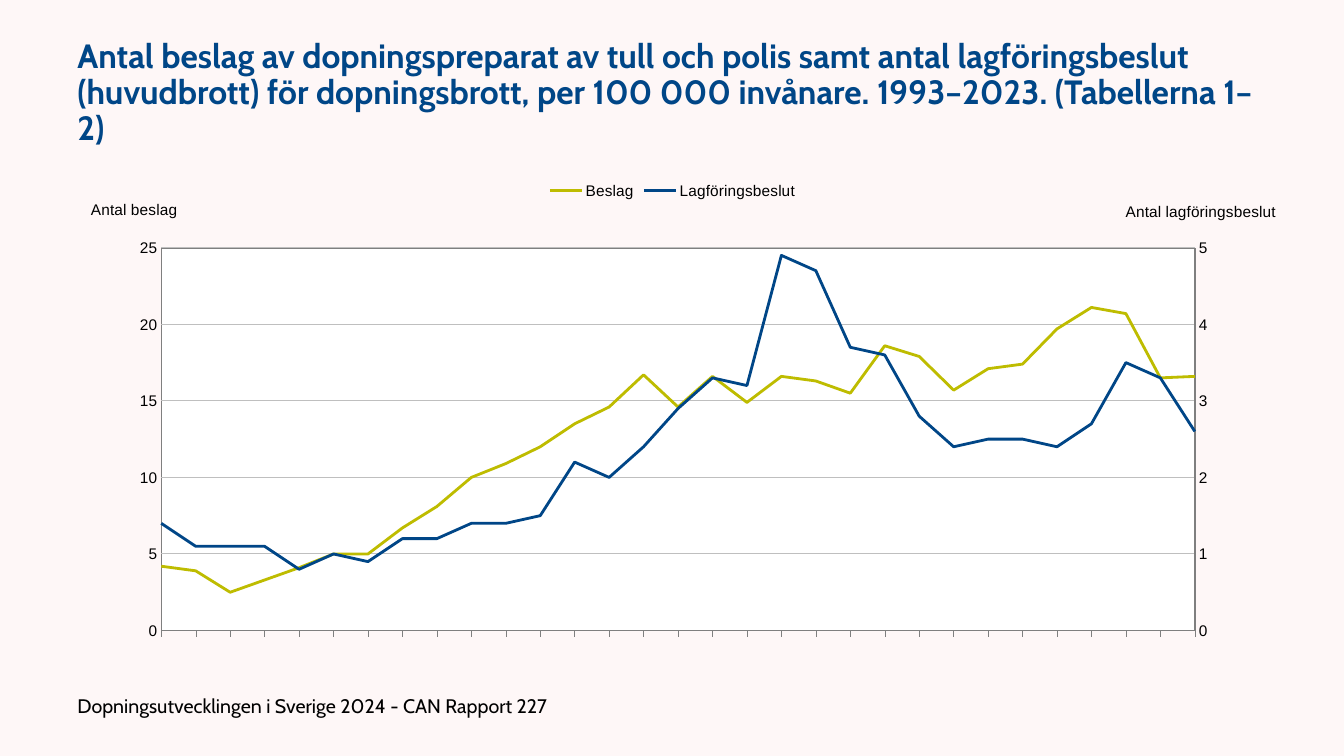
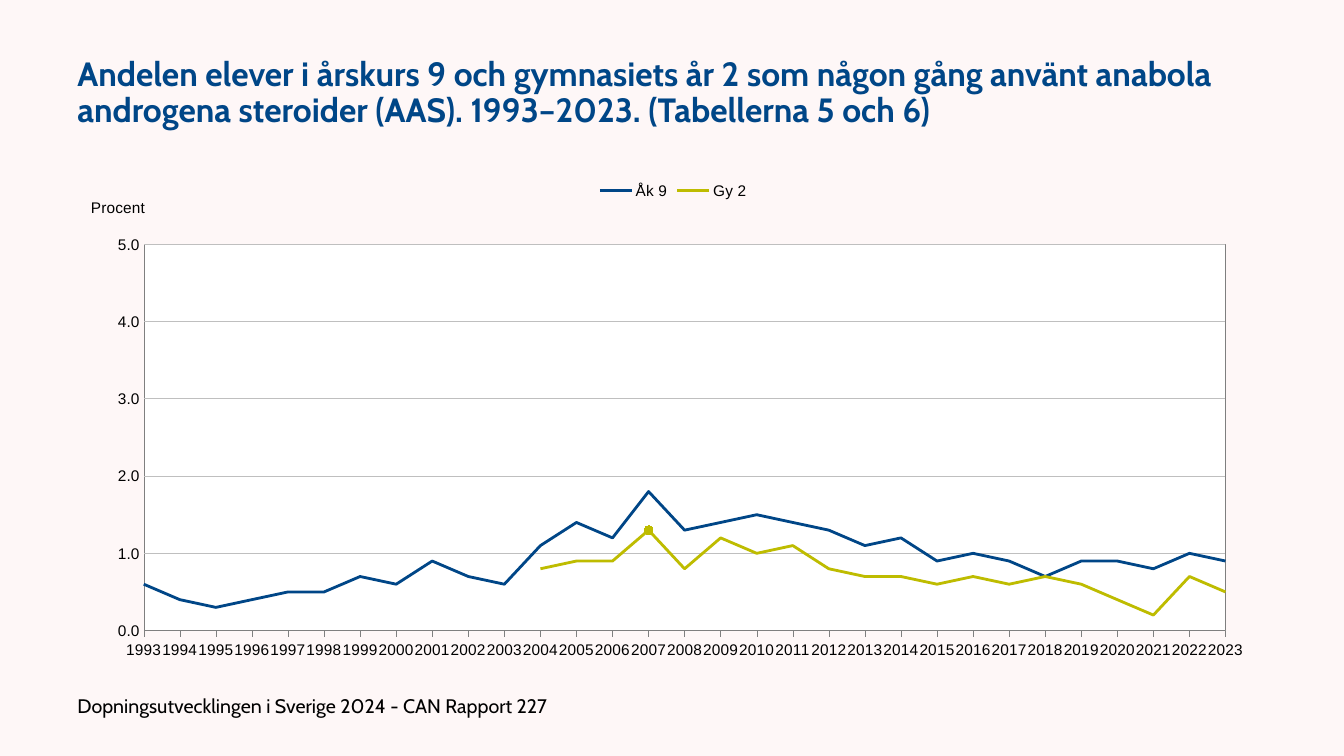
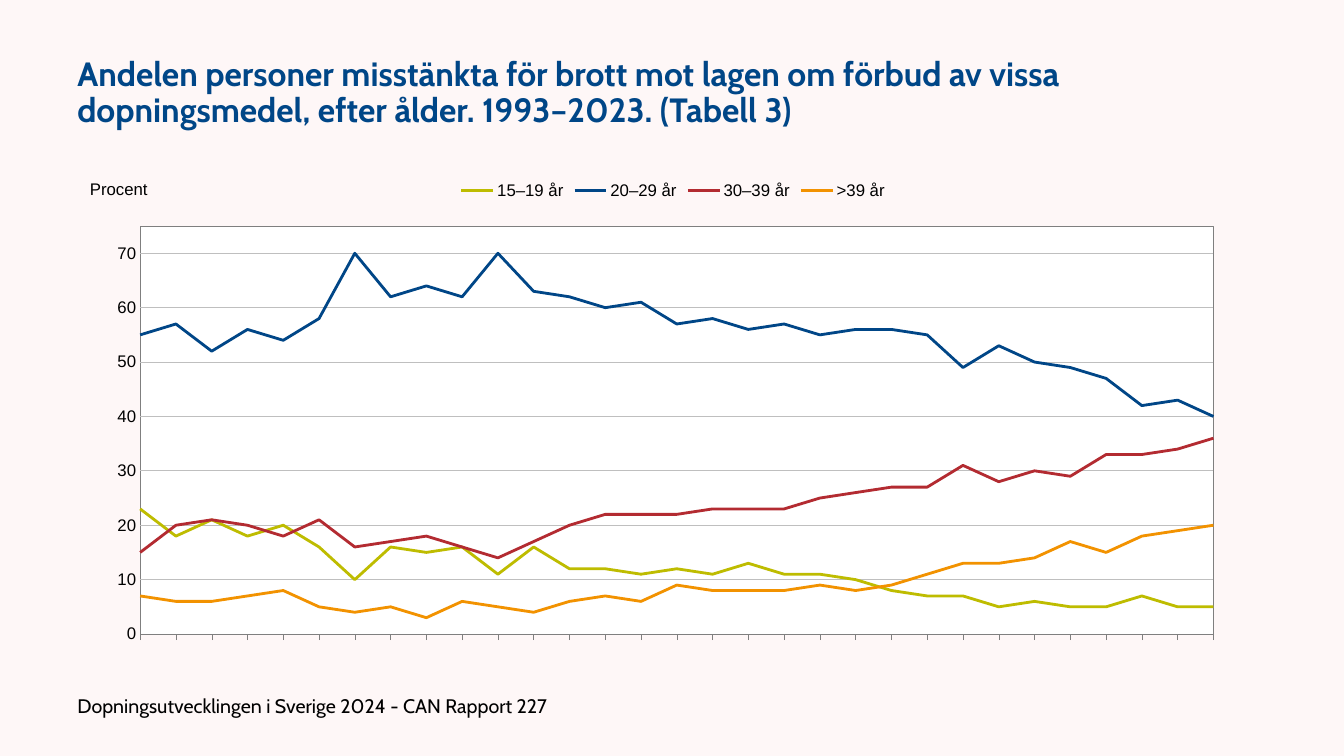
from copy import deepcopy

from lxml import etree
from pptx import Presentation
from pptx.chart import axis as ax
from pptx.chart.data import CategoryChartData
from pptx.dml.color import RGBColor
from pptx.enum import chart as ch, text
from pptx.oxml import parse_xml
from pptx.oxml.ns import nsdecls, qn
from pptx.util import Cm, Pt

PINK = RGBColor(0xFE, 0xF7, 0xF7)
BLUE = RGBColor(0x00, 0x46, 0x87)
OLIVE = RGBColor(0xBE, 0xBC, 0x00)
RED = RGBColor(0xB3, 0x2B, 0x31)
ORANGE = RGBColor(0xF2, 0x92, 0x00)
BLACK = RGBColor(0x00, 0x00, 0x00)
GRID = RGBColor(0xBF, 0xBF, 0xBF)
AXIS = RGBColor(0x7F, 0x7F, 0x7F)

TEXT_FONT = "Cabin"
CHART_FONT = "Arial"
LEFT = Cm(1.7)
YEARS = [str(year) for year in range(1993, 2024)]
FOOTER = "Dopningsutvecklingen i Sverige 2024 - CAN Rapport 227"

SEIZURES = [4.2, 3.9, 2.5, 3.3, 4.1, 5, 5, 6.7, 8.1, 10, 10.9, 12, 13.5, 14.6, 16.7, 14.6,
            16.6, 14.9, 16.6, 16.3, 15.5, 18.6, 17.9, 15.7, 17.1, 17.4, 19.7, 21.1, 20.7,
            16.5, 16.6]
RULINGS = [1.4, 1.1, 1.1, 1.1, 0.8, 1, 0.9, 1.2, 1.2, 1.4, 1.4, 1.5, 2.2, 2, 2.4, 2.9, 3.3,
           3.2, 4.9, 4.7, 3.7, 3.6, 2.8, 2.4, 2.5, 2.5, 2.4, 2.7, 3.5, 3.3, 2.6]
GRADE_9 = [0.6, 0.4, 0.3, 0.4, 0.5, 0.5, 0.7, 0.6, 0.9, 0.7, 0.6, 1.1, 1.4, 1.2, 1.8, 1.3,
           1.4, 1.5, 1.4, 1.3, 1.1, 1.2, 0.9, 1, 0.9, 0.7, 0.9, 0.9, 0.8, 1, 0.9]
UPPER_2 = [None] * 11 + [0.8, 0.9, 0.9, 1.3, 0.8, 1.2, 1, 1.1, 0.8, 0.7, 0.7, 0.6, 0.7, 0.6,
                         0.7, 0.6, 0.4, 0.2, 0.7, 0.5]
AGE_15 = [23, 18, 21, 18, 20, 16, 10, 16, 15, 16, 11, 16, 12, 12, 11, 12, 11, 13, 11, 11, 10,
          8, 7, 7, 5, 6, 5, 5, 7, 5, 5]
AGE_20 = [55, 57, 52, 56, 54, 58, 70, 62, 64, 62, 70, 63, 62, 60, 61, 57, 58, 56, 57, 55, 56,
          56, 55, 49, 53, 50, 49, 47, 42, 43, 40]
AGE_30 = [15, 20, 21, 20, 18, 21, 16, 17, 18, 16, 14, 17, 20, 22, 22, 22, 23, 23, 23, 25, 26,
          27, 27, 31, 28, 30, 29, 33, 33, 34, 36]
AGE_40 = [7, 6, 6, 7, 8, 5, 4, 5, 3, 6, 5, 4, 6, 7, 6, 9, 8, 8, 8, 9, 8, 9, 11, 13, 13, 14,
          17, 15, 18, 19, 20]


def add_text(s, words, top, width, height, size, color, bold=False):
    tf = s.shapes.add_textbox(LEFT, top, width, height).text_frame
    tf.word_wrap = True
    tf.vertical_anchor = text.MSO_ANCHOR.MIDDLE
    p = tf.paragraphs[0]
    p.line_spacing = 0.9
    r = p.add_run()
    r.text = words
    set_font(r.font, TEXT_FONT, size, color, bold)


def set_font(font, name, size, color=BLACK, bold=False):
    font.name = name
    font.size = Pt(size)
    font.bold = bold
    font.color.rgb = color


def set_line(line, color, width):
    line.color.rgb = color
    line.width = Pt(width)


def add_slide(prs, title):
    s = prs.slides.add_slide(prs.slide_layouts[6])
    add_text(s, title, Cm(0.77), Cm(30.48), Cm(3.18), 24, BLUE, True)
    add_text(s, FOOTER, Cm(17.35), Cm(15.24), Cm(0.94), 14, BLACK)
    return s


def set_layout(parent, inner=False, **percents):
    layout = parent.find(qn("c:layout"))
    if layout is None:
        layout = etree.Element(qn("c:layout"))
        parent.insert(0, layout)
    manual = etree.SubElement(layout, qn("c:manualLayout"))
    values = {"layoutTarget": "inner"} if inner else {}
    values.update(xMode="edge", yMode="edge")
    values.update({tag: percent / 100 for tag, percent in percents.items()})
    for tag, value in values.items():
        etree.SubElement(manual, qn("c:" + tag)).set("val", str(value))


def style_plot_area(chart, x, y, w, h):
    area = chart._chartSpace.chart.plotArea
    set_layout(area, True, x=x, y=y, w=w, h=h)
    area.append(parse_xml(
        f'<c:spPr {nsdecls("c", "a")}>'
        '<a:solidFill><a:srgbClr val="FFFFFF"/></a:solidFill>'
        f'<a:ln w="{Pt(0.25)}"><a:solidFill><a:srgbClr val="{AXIS}"/></a:solidFill></a:ln>'
        '</c:spPr>'))


def style_value_axis(axis, title, x, y, top, step, size, number_format="0"):
    axis.minimum_scale, axis.maximum_scale, axis.major_unit = 0, top, step
    axis.major_tick_mark = ch.XL_TICK_MARK.NONE
    axis.tick_labels.number_format = number_format
    axis.tick_labels.number_format_is_linked = False
    set_font(axis.tick_labels.font, CHART_FONT, size)
    tf = axis.axis_title.text_frame
    r = tf.paragraphs[0].add_run()
    r.text = title
    set_font(r.font, CHART_FONT, size)
    body = tf._txBody.bodyPr
    body.set("rot", "0")
    body.set("vert", "horz")
    set_layout(axis.axis_title._element, x=x, y=y)


def style_category_axis(axis, size, labelled):
    axis.major_tick_mark = ch.XL_TICK_MARK.OUTSIDE
    set_line(axis.format.line, AXIS, 0.25)
    if not labelled:
        axis.tick_label_position = ch.XL_TICK_LABEL_POSITION.NONE
        return
    set_font(axis.tick_labels.font, CHART_FONT, size)
    axis._element.find(qn("c:txPr")).find(qn("a:bodyPr")).set("rot", "-60000000")
    skip = etree.Element(qn("c:tickLblSkip"))
    skip.set("val", "1")
    axis._element.find(qn("c:noMultiLvlLbl")).addprevious(skip)


def start_lines_on_axis(axis):
    between = axis._element.find(qn("c:crossBetween"))
    if between is None:
        between = etree.Element(qn("c:crossBetween"))
        axis._element.find(qn("c:crosses")).addnext(between)
    between.set("val", "midCat")


def add_line_chart(s, series, plot, size, labelled=False):
    data = CategoryChartData()
    data.categories = YEARS
    for name, values, _ in series:
        data.add_series(name, values)
    chart = s.shapes.add_chart(ch.XL_CHART_TYPE.LINE, LEFT, Cm(4.29), Cm(30.53), Cm(12.57),
                               data).chart
    chart.has_title = False
    set_font(chart.font, CHART_FONT, size)
    chart.has_legend = True
    chart.legend.position = ch.XL_LEGEND_POSITION.TOP
    chart.legend.include_in_layout = False
    set_font(chart.legend.font, CHART_FONT, size)
    chart.plots[0].vary_by_categories = False
    for line, (_, _, color) in zip(chart.plots[0].series, series):
        line.smooth = False
        line.marker.style = ch.XL_MARKER_STYLE.NONE
        set_line(line.format.line, color, 2)
    style_plot_area(chart, *plot)
    style_category_axis(chart.category_axis, size, labelled)
    axis = chart.value_axis
    start_lines_on_axis(axis)
    axis.has_major_gridlines = True
    set_line(axis.major_gridlines.format.line, GRID, 0.75)
    axis.format.line.fill.background()
    return chart


def move_last_series_right(chart):
    left = chart.plots[0]._element
    right = deepcopy(left)
    left.remove(left.findall(qn("c:ser"))[-1])
    for ser in right.findall(qn("c:ser"))[:-1]:
        right.remove(ser)
    left.addnext(right)
    left_val = chart.value_axis._element
    cat = deepcopy(chart.category_axis._element)
    val = deepcopy(left_val)
    left_val.addnext(val)
    val.addnext(cat)
    cat_id, val_id = "50010", "50020"
    for ref, number in zip(right.findall(qn("c:axId")), (cat_id, val_id)):
        ref.set("val", number)
    for element, own, other in ((cat, cat_id, val_id), (val, val_id, cat_id)):
        element.find(qn("c:axId")).set("val", own)
        element.find(qn("c:crossAx")).set("val", other)
    val.find(qn("c:axPos")).set("val", "r")
    val.find(qn("c:crosses")).set("val", "max")
    ax.CategoryAxis(cat).visible = False
    axis = ax.ValueAxis(val)
    axis.has_major_gridlines = False
    set_line(axis.format.line, AXIS, 1)
    return axis


def mark_point(line, index, color):
    marker = line.points[index].marker
    marker.style = ch.XL_MARKER_STYLE.CIRCLE
    marker.size = 6
    marker.format.fill.solid()
    marker.format.fill.fore_color.rgb = color
    set_line(marker.format.line, color, 0.75)
    set_line(line.points[index].format.line, color, 2)


def seizures_slide(prs):
    s = add_slide(prs, "Antal beslag av dopningspreparat av tull och polis samt antal "
                       "lagföringsbeslut (huvudbrott) för dopningsbrott, per 100 000 invånare. "
                       "1993–2023. (Tabellerna 1–2)")
    chart = add_line_chart(s, [("Beslag", SEIZURES, OLIVE), ("Lagföringsbeslut", RULINGS, BLUE)],
                           (7.75, 15.55, 85.4, 76.75), 11)
    left = chart.value_axis
    right = move_last_series_right(chart)
    style_value_axis(left, "Antal beslag", 1.7, 5.2, 25, 5, 11, "#,##0")
    style_value_axis(right, "Antal lagföringsbeslut", 87.2, 5.6, 5, 1, 11)


def students_slide(prs):
    s = add_slide(prs, "Andelen elever i årskurs 9 och gymnasiets år 2 som någon gång använt "
                       "anabola androgena steroider (AAS). 1993–2023. (Tabellerna 5 och 6)")
    chart = add_line_chart(s, [("Åk 9", GRADE_9, BLUE), ("Gy 2", UPPER_2, OLIVE)],
                           (6.3, 14.9, 89.3, 77.4), 11, labelled=True)
    style_value_axis(chart.value_axis, "Procent", 1.7, 4.8, 5, 1, 11, "0.0")
    mark_point(chart.plots[0].series[1], YEARS.index("2007"), OLIVE)


def suspects_slide(prs):
    s = add_slide(prs, "Andelen personer misstänkta för brott mot lagen om förbud av vissa "
                       "dopningsmedel, efter ålder. 1993–2023. (Tabell 3)")
    ages = [("15–19 år", AGE_15, OLIVE), ("20–29 år", AGE_20, BLUE),
            ("30–39 år", AGE_30, RED), (">39 år", AGE_40, ORANGE)]
    chart = add_line_chart(s, ages, (6, 11.2, 88.6, 81.8), 12)
    style_value_axis(chart.value_axis, "Procent", 1.6, 1.2, 75, 10, 12)


def main():
    prs = Presentation()
    prs.slide_width, prs.slide_height = Cm(33.87), Cm(19.05)
    fill = prs.slide_master.background.fill
    fill.solid()
    fill.fore_color.rgb = PINK
    seizures_slide(prs)
    students_slide(prs)
    suspects_slide(prs)
    prs.save("out.pptx")


if __name__ == "__main__":
    main()
